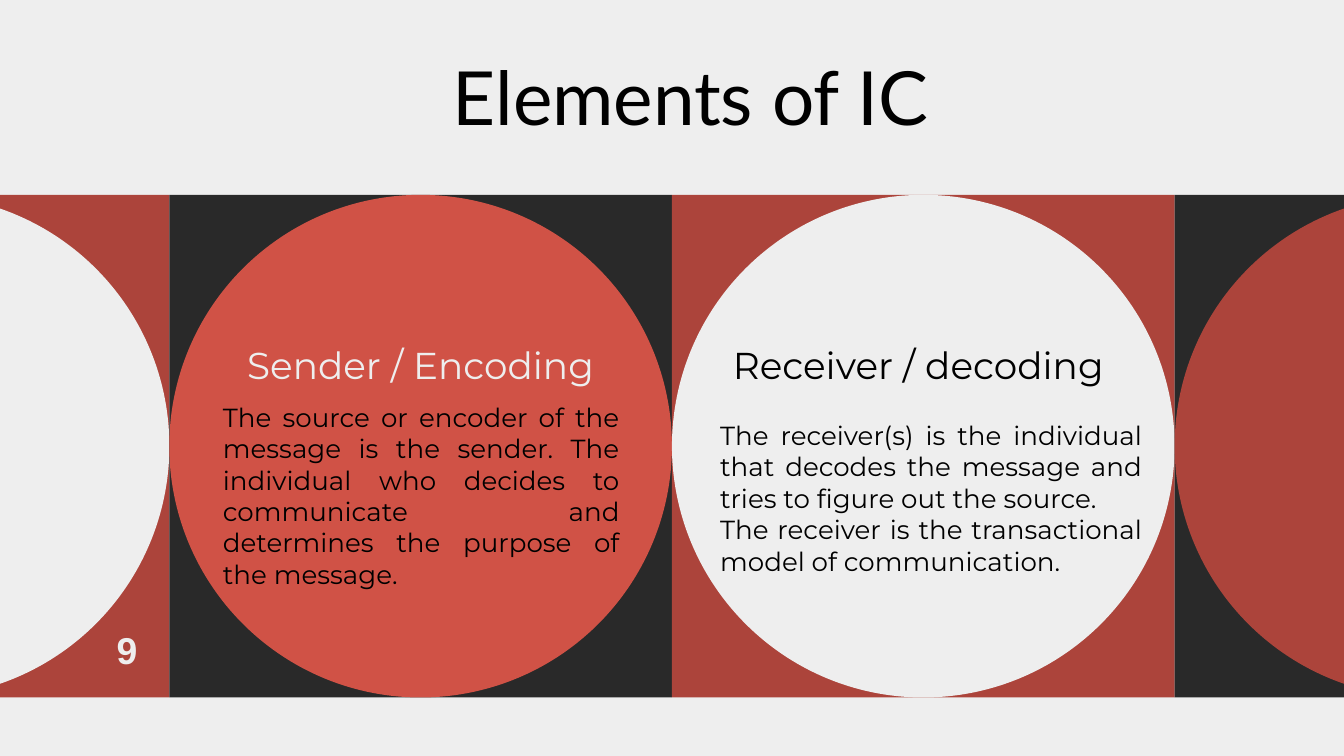
from pptx import Presentation
from pptx.dml.color import RGBColor
from pptx.enum.shapes import MSO_SHAPE as Shape
from pptx.enum.text import MSO_ANCHOR as Anchor, PP_ALIGN as Align
from pptx.util import Inches, Pt

PAPER, BLACK, CHARCOAL = "EEEEEE", "000000", "292929"
BRICK, CORAL = "AC443B", "D05246"


def paint(color_format, color):
    color_format.rgb = RGBColor.from_string(color)


def add_text(lines, box, style, color, align=Align.LEFT):
    frame = slide.shapes.add_textbox(*map(Inches, box)).text_frame
    frame.word_wrap = True
    frame.vertical_anchor = Anchor.MIDDLE
    for side in ("left", "top", "right", "bottom"):
        setattr(frame, f"margin_{side}", Inches(0.1))
    frame.text = "\n".join(lines)
    for paragraph in frame.paragraphs:
        paragraph.alignment = align
        for run in paragraph.runs:
            for key, value in style.items():
                setattr(run.font, key, value)
            paint(run.font.color, color)


deck = Presentation()
deck.slide_width, deck.slide_height = Inches(10), Inches(10 * 9 / 16)
slide = deck.slides.add_slide(deck.slide_layouts[6])
background = slide.background.fill
background.solid()
paint(background.fore_color, PAPER)

tile_size = 3.74
first_left = -2.48
band_top = 1.45
tiles = [(BRICK, PAPER), (CHARCOAL, CORAL), (BRICK, PAPER), (CHARCOAL, BRICK)]
for column, colors in enumerate(tiles):
    left = first_left + column * tile_size
    for outline, color in zip((Shape.RECTANGLE, Shape.OVAL), colors):
        tile = slide.shapes.add_shape(
            outline, Inches(left), Inches(band_top), Inches(tile_size), Inches(tile_size))
        tile.shadow.inherit = False
        tile.fill.solid()
        paint(tile.fill.fore_color, color)
        tile.line.fill.background()

title_style = {"name": "Lato", "size": Pt(40)}
heading_style = {"name": "Montserrat", "size": Pt(20)}
body_style = {"name": "Montserrat", "size": Pt(14)}
number_style = {"name": "Arial", "size": Pt(20), "bold": True}

elements = [
    ("Sender / Encoding", PAPER, (1.54, 2.4, 3.18, 0.62), (1.56, 3.03, 3.15, 1.31),
     ["The source or encoder of the message is the sender. The individual who "
      "decides to communicate and determines the purpose of the message. "]),
    ("Receiver / decoding ", BLACK, (5.28, 2.4, 3.18, 0.62), (5.26, 3.03, 3.34, 1.35),
     ["The receiver(s) is the individual that decodes the message and tries to "
      "figure out the source.",
      "The receiver is the transactional model of communication."]),
]
for heading, heading_color, heading_box, body_box, body in elements:
    add_text([heading], heading_box, heading_style, heading_color, Align.CENTER)
    add_text(body, body_box, body_style, BLACK, Align.JUSTIFY)

add_text(["Elements of IC"], (3.27, 0.4, 3.9, 0.63), title_style, BLACK)
add_text(["9"], (0.77, 4.61, 0.36, 0.44), number_style, PAPER)

deck.save("out.pptx")
